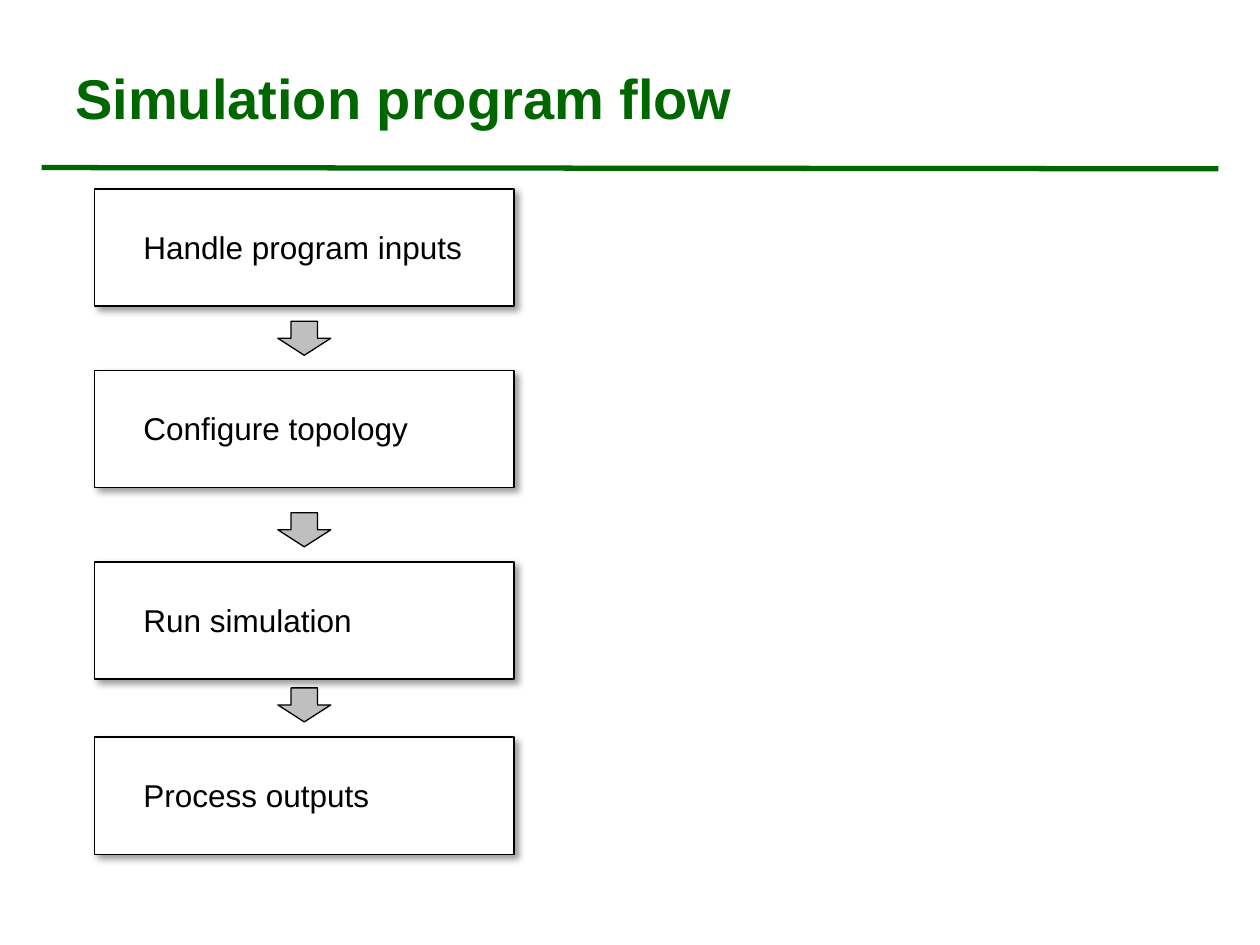
from dataclasses import dataclass

from lxml import etree
from pptx import Presentation
from pptx import util as u
from pptx.dml.color import RGBColor
from pptx.enum import shapes, text
from pptx.oxml import ns


@dataclass(frozen=True)
class Theme:
    font: str = "Arial"
    green: RGBColor = RGBColor(0x00, 0x66, 0x00)
    ink: RGBColor = RGBColor(0x00, 0x00, 0x00)
    paper: RGBColor = RGBColor(0xFF, 0xFF, 0xFF)
    arrow: RGBColor = RGBColor(0xBF, 0xBF, 0xBF)
    title_size: u.Pt = u.Pt(32)
    step_size: u.Pt = u.Pt(18)
    outline: u.Pt = u.Pt(0.75)
    rule: u.Pt = u.Pt(3)


THEME = Theme()
STEPS = [
    ("Handle program inputs", 1.5, 2.75),
    ("Configure topology", 2.94, 2.32),
    ("Run simulation", 4.46, 1.87),
    ("Process outputs", 5.85, 2.01),
]


def add_text(slide, wording, box, size, color, bold=False, wrap=False):
    frame = slide.shapes.add_textbox(*map(u.Inches, box)).text_frame
    frame.word_wrap = wrap
    frame.vertical_anchor = text.MSO_ANCHOR.MIDDLE if wrap else text.MSO_ANCHOR.TOP
    if not wrap:
        frame.auto_size = text.MSO_AUTO_SIZE.SHAPE_TO_FIT_TEXT
    paragraph = frame.paragraphs[0]
    paragraph.text = wording
    font = paragraph.font
    font.name, font.size, font.bold = THEME.font, size, bold
    font.color.rgb = color


def add_outlined(slide, kind, box, fill):
    outlined = slide.shapes.add_shape(kind, *map(u.Inches, box))
    outlined.shadow.inherit = False
    outlined.fill.solid()
    outlined.fill.fore_color.rgb = fill
    outlined.line.color.rgb = THEME.ink
    outlined.line.width = THEME.outline
    return outlined


def add_drop_shadow(card):
    effects = card._element.spPr.find(ns.qn("a:effectLst"))
    shadow = etree.SubElement(
        effects, ns.qn("a:outerShdw"), blurRad=str(u.Pt(4)), dist=str(u.Pt(3)),
        dir=str(45 * 60000), algn="tl", rotWithShape="0")
    color = etree.SubElement(shadow, ns.qn("a:srgbClr"), val=str(THEME.ink))
    etree.SubElement(color, ns.qn("a:alpha"), val="40000")


def add_header(slide, box):
    rule = slide.shapes.add_connector(
        shapes.MSO_CONNECTOR.STRAIGHT,
        *map(u.Inches, (0.33, 1.33, 9.67, 1.34)))
    rule.line.color.rgb = THEME.green
    rule.line.width = THEME.rule
    etree.SubElement(rule._element.spPr, ns.qn("a:effectLst"))
    add_text(slide, "Simulation program flow", box, THEME.title_size,
             THEME.green, bold=True, wrap=True)


def add_step(slide, label, label_width, box):
    left, top, width, height = box
    card = add_outlined(slide, shapes.MSO_SHAPE.RECTANGLE, box, THEME.paper)
    add_drop_shadow(card)
    add_text(slide, label, (left + 0.29, top + 0.26, label_width, 0.4),
             THEME.step_size, THEME.ink)


def add_flow(slide, left, width, height):
    arrow_width, arrow_height, arrow_rise = 0.42, 0.27, 0.39
    arrow_left = left + (width - arrow_width) / 2
    for number, (label, top, label_width) in enumerate(STEPS):
        add_step(slide, label, label_width, (left, top, width, height))
        if number:
            add_outlined(
                slide, shapes.MSO_SHAPE.DOWN_ARROW,
                (arrow_left, top - arrow_rise, arrow_width, arrow_height),
                THEME.arrow)


def main():
    deck = Presentation()
    deck.slide_width, deck.slide_height = u.Inches(10), u.Inches(7.5)
    slide = deck.slides.add_slide(deck.slide_layouts[6])
    add_header(slide, (0.5, 0.3, 8.97, 0.94))
    add_flow(slide, left=0.75, width=3.33, height=0.93)
    deck.save("out.pptx")


if __name__ == "__main__":
    main()
